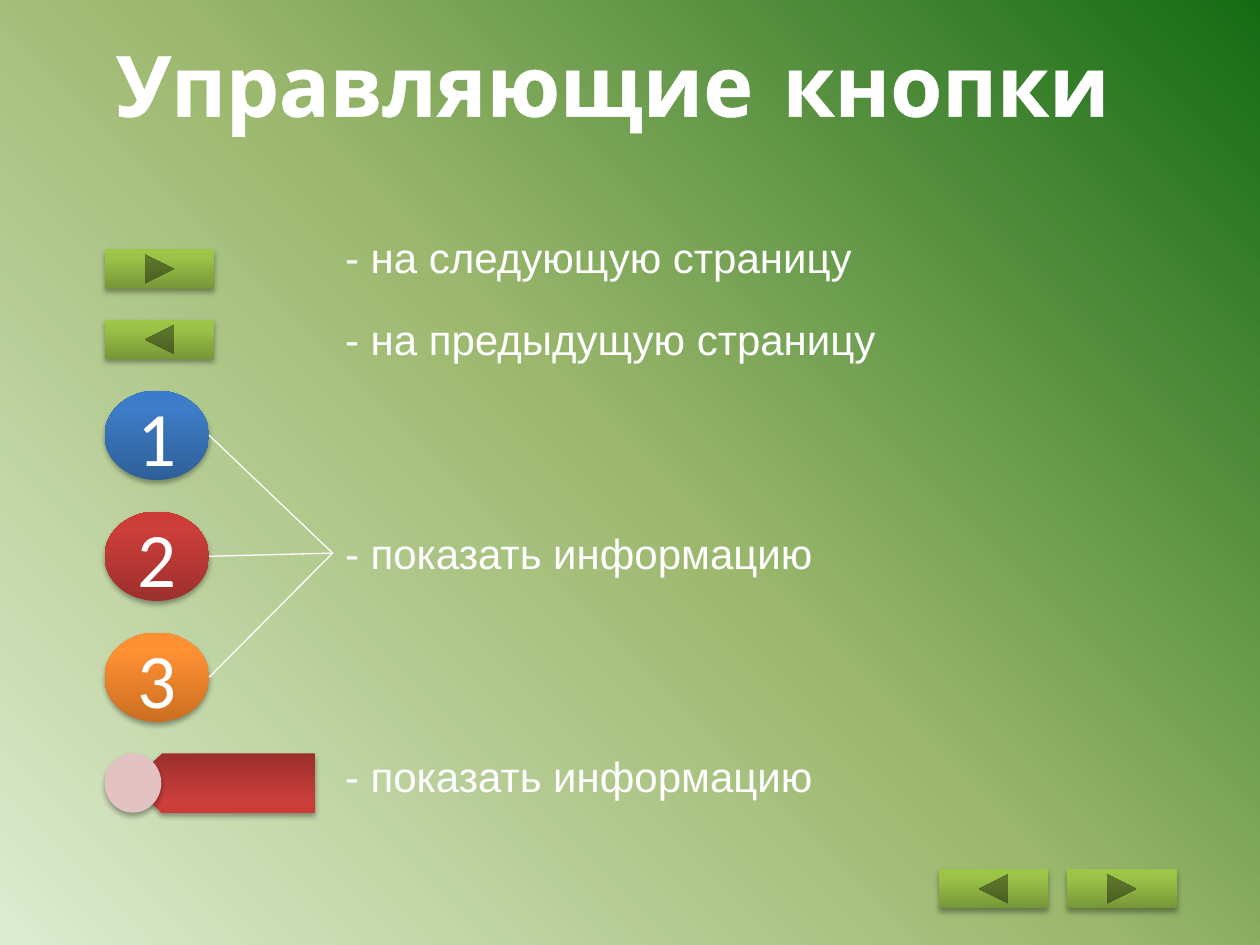
from pptx import Presentation
from pptx.dml.color import RGBColor
from pptx.enum.shapes import MSO_CONNECTOR, MSO_SHAPE
from pptx.enum.text import MSO_ANCHOR, MSO_AUTO_SIZE, PP_ALIGN
from pptx.oxml import parse_xml
from pptx.oxml.ns import nsdecls, qn
from pptx.util import Inches, Pt

# Content
TITLE = "Управляющие кнопки"
LABELS = [  # text, top, width
    ("- на следующую страницу", 1.79, 4.26),
    ("- на предыдущую страницу", 2.44, 4.45),
    ("- показать информацию", 4.14, 4.14),
    ("- показать информацию", 5.91, 4.14),
]
INFORMATION_LABEL = 2

WHITE = "FFFFFF"
GREEN = [(0, "779737"), (80, "9BC348"), (100, "9DC746")]
BLUE = [(0, "2F5F99"), (80, "3D7CC7"), (100, "3A7CCB")]
RED = [(0, "9C2F2D"), (80, "CB3E3A"), (100, "CE3B37")]
ORANGE = [(0, "CC6E20"), (80, "FF9034"), (100, "FF9136")]
BACKGROUND = [(0, "DDEBCF"), (50, "9CB86E"), (100, "156B13")]

FORWARD = MSO_SHAPE.ACTION_BUTTON_FORWARD_OR_NEXT
BACK = MSO_SHAPE.ACTION_BUTTON_BACK_OR_PREVIOUS
BUTTONS = [  # shape, left, top
    (FORWARD, 0.83, 1.98),
    (BACK, 0.83, 2.54),
    (FORWARD, 8.47, 6.9),
    (BACK, 7.45, 6.9),
]
CIRCLES = [("1", BLUE), ("2", RED), ("3", ORANGE)]

# Layout
LEFT, LABEL_LEFT, LABEL_HEIGHT = 0.83, 2.64, 0.5
BUTTON_SIZE = (0.87, 0.31)
CIRCLE_TOP, CIRCLE_STEP, CIRCLE_SIZE = 3.1, 0.96, (0.83, 0.71)


def color(value):
    return RGBColor.from_string(value)


def paint_gradient(fill, properties, stops, angle):
    fill.solid()
    stop_xml = "".join(
        f'<a:gs pos="{position * 1000}"><a:srgbClr val="{value}"/></a:gs>'
        for position, value in stops)
    gradient = parse_xml(
        f'<a:gradFill {nsdecls("a")} rotWithShape="1"><a:gsLst>{stop_xml}</a:gsLst>'
        f'<a:lin ang="{angle * 60000}" scaled="0"/></a:gradFill>')
    properties.replace(properties.find(qn("a:solidFill")), gradient)


def add_raised_shape(shapes, kind, box, paint):
    shape = shapes.add_shape(kind, *map(Inches, box))
    if isinstance(paint, str):
        shape.fill.solid()
        shape.fill.fore_color.rgb = color(paint)
    else:
        paint_gradient(shape.fill, shape.element.spPr, paint, 270)
    shape.line.fill.background()
    shape.shadow.inherit = False
    shape.element.spPr.find(qn("a:effectLst")).append(parse_xml(
        f'<a:outerShdw {nsdecls("a")} blurRad="40000" dist="23000" dir="5400000" '
        'rotWithShape="0"><a:srgbClr val="000000"><a:alpha val="35000"/>'
        '</a:srgbClr></a:outerShdw>'))
    return shape


def write(shape, text, alignment, **font):
    paragraph = shape.text_frame.paragraphs[0]
    paragraph.alignment = alignment
    run = paragraph.add_run()
    run.text = text
    run.font.color.rgb = color(WHITE)
    for name, value in font.items():
        setattr(run.font, name, value)
    return run


def add_label(shapes, box, text, alignment, **font):
    label = shapes.add_textbox(*map(Inches, box))
    label.text_frame.word_wrap = False
    label.text_frame.auto_size = MSO_AUTO_SIZE.SHAPE_TO_FIT_TEXT
    return label, write(label, text, alignment, **font)


def main():
    presentation = Presentation()
    presentation.slide_width, presentation.slide_height = Inches(10), Inches(7.5)
    slide = presentation.slides.add_slide(presentation.slide_layouts[6])
    shapes = slide.shapes

    # Background
    fill = slide.background.fill
    fill.solid()
    paint_gradient(fill, slide.element.find(".//" + qn("p:bgPr")), BACKGROUND, 315)

    # Title with a thin outline
    _, run = add_label(shapes, (0.57, 0.21, 8.59, 0.91), TITLE, PP_ALIGN.CENTER,
                       name="Comic Neue", size=Pt(48), bold=True)
    run.font._element.insert(0, parse_xml(
        f'<a:ln {nsdecls("a")} w="9525"><a:solidFill><a:srgbClr val="{WHITE}"/>'
        '</a:solidFill></a:ln>'))

    # Navigation buttons
    for kind, left, top in BUTTONS:
        add_raised_shape(shapes, kind, (left, top, *BUTTON_SIZE), GREEN)

    # Explanations
    labels = [
        add_label(shapes, (LABEL_LEFT, top, width, LABEL_HEIGHT), text,
                  PP_ALIGN.LEFT, name="Arial", size=Pt(24))[0]
        for text, top, width in LABELS
    ]

    # Numbered circles, each tied to the shared explanation
    for index, (number, stops) in enumerate(CIRCLES):
        top = CIRCLE_TOP + index * CIRCLE_STEP
        width, height = CIRCLE_SIZE
        circle = add_raised_shape(shapes, MSO_SHAPE.OVAL,
                                  (LEFT, top, width, height), stops)
        circle.text_frame.vertical_anchor = MSO_ANCHOR.MIDDLE
        write(circle, number, PP_ALIGN.CENTER, name="Calibri", size=Pt(44))
        start = Inches(LEFT + width), Inches(top + height / 2)
        connector = shapes.add_connector(MSO_CONNECTOR.STRAIGHT, *start, *start)
        connector.end_connect(labels[INFORMATION_LABEL], 1)
        connector.line.color.rgb = color(WHITE)
        connector.line.width = Pt(0.75)
        connector.element.spPr.append(parse_xml(f'<a:effectLst {nsdecls("a")}/>'))

    # Tab button: a turned pentagon with a round knob
    tab = shapes.add_group_shape().shapes
    plate = add_raised_shape(tab, MSO_SHAPE.PENTAGON, (1.05, 5.98, 1.45, 0.47), RED)
    plate.rotation = 180
    add_raised_shape(tab, MSO_SHAPE.OVAL, (LEFT, 5.98, 0.45, 0.47), "E2C2C2")

    presentation.save("out.pptx")


if __name__ == "__main__":
    main()
